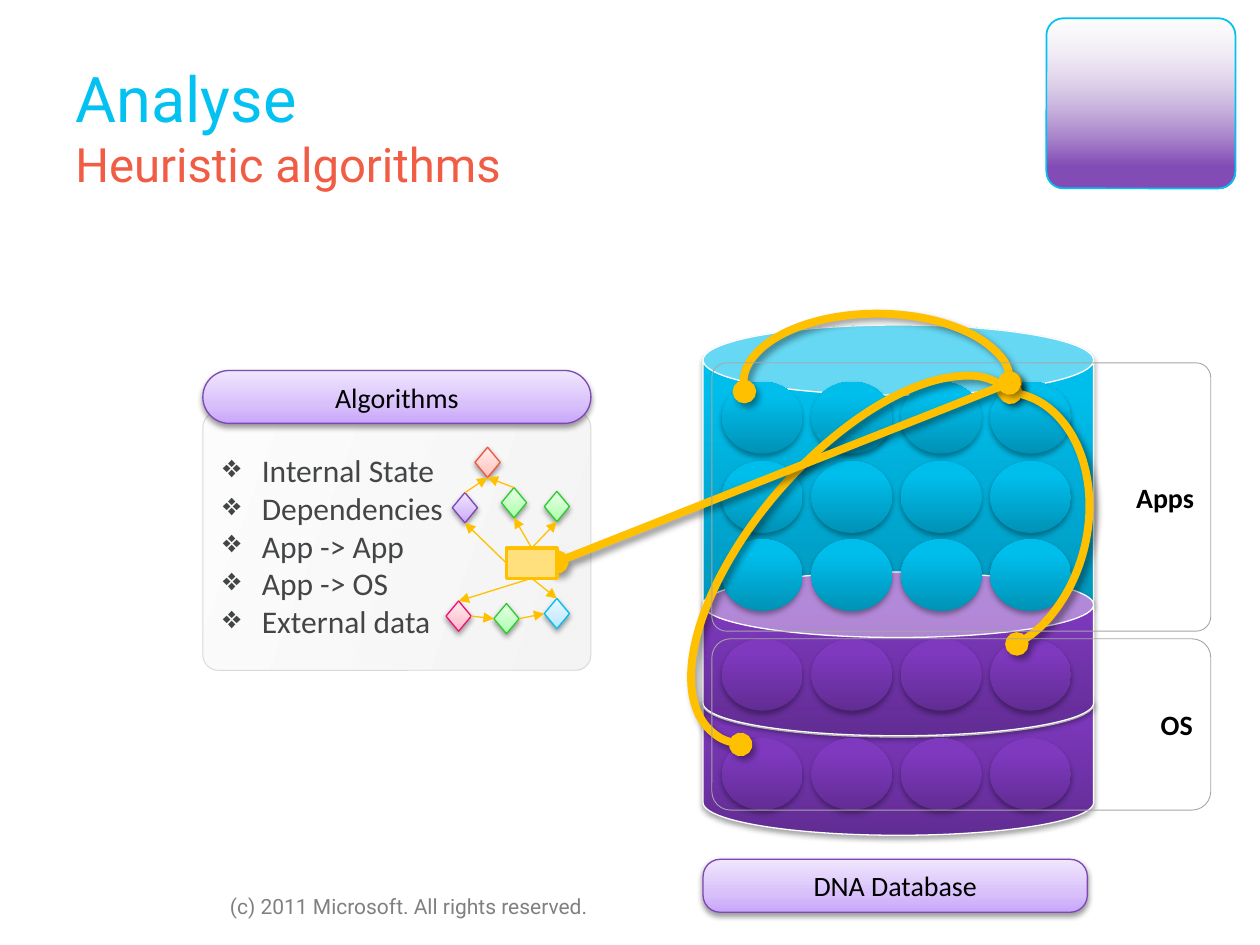
from pptx import Presentation
from pptx.dml.color import RGBColor
from pptx.enum.shapes import MSO_CONNECTOR as LINK, MSO_SHAPE as SHAPE
from pptx.enum.text import MSO_ANCHOR as ANCHOR, PP_ALIGN as ALIGN
from pptx.oxml.ns import qn
from pptx.util import Inches, Pt
from lxml.etree import SubElement

BLACK = RGBColor(0x00, 0x00, 0x00)
WHITE = RGBColor(0xFF, 0xFF, 0xFF)
BODY_GREY = RGBColor(0x43, 0x45, 0x47)
FOOTER_GREY = RGBColor(0x80, 0x80, 0x80)
FRAME_GREY = RGBColor(0xA6, 0xA6, 0xA6)
PANEL_EDGE = RGBColor(0xD9, 0xD9, 0xD9)
PANEL_DARK = RGBColor(0xF0, 0xF0, 0xF0)
PANEL_LIGHT = RGBColor(0xFC, 0xFC, 0xFC)
TITLE_BLUE = RGBColor(0x03, 0xC2, 0xF1)
TITLE_RED = RGBColor(0xF1, 0x5C, 0x44)
TILE_EDGE = RGBColor(0x00, 0xC2, 0xF1)
TILE_PURPLE = RGBColor(0x82, 0x4B, 0xB5)
TILE_PALE = RGBColor(0xE6, 0xE2, 0xEC)
AMBER = RGBColor(0xFF, 0xC0, 0x00)
PALE_AMBER = RGBColor(0xFF, 0xE0, 0x7D)
VIOLET = RGBColor(0x7F, 0x47, 0xB4)
RED = RGBColor(0xF0, 0x57, 0x3E)
BLUE = RGBColor(0x00, 0xBF, 0xEF)
GREEN = RGBColor(0x2E, 0xCB, 0x2E)
PINK = RGBColor(0xED, 0x13, 0x74)


def ramp(positions, *colors):
    """Pair gradient positions with hex colours, all opaque."""
    return [(at, RGBColor.from_string(color), 100) for at, color in zip(positions, colors)]


SOFT, DEEP = (0, 35, 100), (0, 80, 100)
APP_RAMP = ramp(DEEP, "0092B6", "00BEEC", "00BFEE")
OS_RAMP = ramp(DEEP, "612C93", "7F39BF", "7F37C2")
TINTS = {
    VIOLET: ramp(SOFT, "C8A5FB", "D8C0FB", "F0E6FE"),
    RED: ramp(SOFT, "FFBEBA", "FFD1CE", "FFEEEC"),
    BLUE: ramp(SOFT, "B6E5FF", "CCECFF", "ECF8FF"),
    GREEN: ramp(SOFT, "A7FFA7", "C1FFC1", "E7FFE7"),
    PINK: ramp(SOFT, "FFB4C5", "FFCAD6", "FFEBEF"),
}
LABEL_SHADOW = (38, 3.1, 1.6, 90)
STORE_SHADOW = (35, 3.1, 1.8, 90)
LINK_SHADOW = (40, 4, 3, 45)


def add_color(parent, color, alpha):
    """Append an RGB colour with an opacity in percent."""
    rgb = SubElement(parent, qn("a:srgbClr"), val=str(color))
    SubElement(rgb, qn("a:alpha"), val=str(alpha * 1000))


def set_gradient(shape, stops, angle):
    """Fill a shape with gradient stops at a clockwise angle."""
    shape.fill.gradient()
    shape.fill.gradient_angle = (360 - angle) % 360
    stop_list = shape._element.spPr.find(".//" + qn("a:gsLst"))
    for old in list(stop_list):
        stop_list.remove(old)
    for at, color, alpha in stops:
        add_color(SubElement(stop_list, qn("a:gs"), pos=str(at * 1000)), color, alpha)


def set_shadow(shape, shadow):
    """Replace the inherited shadow with the given one, if any."""
    effects = SubElement(shape._element.spPr, qn("a:effectLst"))
    if shadow:
        alpha, blur, distance, angle = shadow
        outer = SubElement(effects, qn("a:outerShdw"), blurRad=str(Pt(blur)), dist=str(Pt(distance)),
                           dir=str(angle * 60000), rotWithShape="0")
        add_color(outer, BLACK, alpha)


def set_line(shape, color, width, **ends):
    """Set an outline and its optional headEnd and tailEnd."""
    shape.line.color.rgb = color
    shape.line.width = Pt(width)
    for end, kind in ends.items():
        SubElement(shape.line._get_or_add_ln(), qn("a:" + end), type=kind)


def add_figure(slide, preset, box, stops=None, edge=None, width=0.75, shadow=None, adj=(), angle=270, **ends):
    """Add a preset shape with its fill, outline and shadow."""
    shape = slide.shapes.add_shape(preset, *map(Inches, box))
    for index, value in enumerate(adj):
        shape.adjustments[index] = value
    if stops:
        set_gradient(shape, stops, angle)
    else:
        shape.fill.background()
    if edge is None:
        shape.line.fill.background()
    else:
        set_line(shape, edge, width, **ends)
    set_shadow(shape, shadow)
    return shape


def add_link(slide, start, end, width, shadow=None, **ends):
    """Add an amber straight connector."""
    link = slide.shapes.add_connector(LINK.STRAIGHT, *map(Inches, (*start, *end)))
    set_line(link, AMBER, width, **ends)
    set_shadow(link, shadow)


def add_run(paragraph, text, size, font, color, bold=False):
    """Add one styled run."""
    run = paragraph.add_run()
    run.text = text
    run.font.size, run.font.name, run.font.bold = Pt(size), font, bold
    run.font.color.rgb = color


def write_label(shape, text, align, size=16, font="Calibri", color=BLACK, bold=False):
    """Write one vertically centred line in a shape."""
    frame = shape.text_frame
    frame.word_wrap = True
    frame.vertical_anchor = ANCHOR.MIDDLE
    frame.paragraphs[0].alignment = align
    add_run(frame.paragraphs[0], text, size, font, color, bold)


def add_plate(slide, box, text, corner):
    """Add a violet name plate."""
    plate = add_figure(slide, SHAPE.ROUNDED_RECTANGLE, box, TINTS[VIOLET], VIOLET,
                       shadow=LABEL_SHADOW, adj=[corner])
    write_label(plate, text, ALIGN.CENTER)


def add_title(slide, box):
    """Add the title and its subtitle line."""
    frame = slide.shapes.add_textbox(*map(Inches, box)).text_frame
    frame.word_wrap = True
    frame.vertical_anchor = ANCHOR.MIDDLE
    heading = frame.paragraphs[0]
    add_run(heading, "Analyse", 36, "Roboto", TITLE_BLUE)
    heading.add_line_break()
    add_run(heading, "Heuristic algorithms", 27, "Roboto", TITLE_RED)


def add_algorithms(slide, box):
    """Add the algorithm panel with its bullets and header."""
    left, top, width, height = box
    panel = [(0, PANEL_DARK, 72), (100, PANEL_LIGHT, 67)]
    add_figure(slide, SHAPE.ROUNDED_RECTANGLE, (left, top + 0.33, width, height - 0.33),
               panel, PANEL_EDGE, 0.5, adj=[0.06], angle=200)
    bullets = slide.shapes.add_textbox(*map(Inches, (left + 0.06, top + 0.59, 2.19, 1.62)))
    frame = bullets.text_frame
    frame.word_wrap = True
    topics = ["Internal State", "Dependencies", "App -> App", "App -> OS", "External data"]
    for index, topic in enumerate(topics):
        paragraph = frame.add_paragraph() if index else frame.paragraphs[0]
        paragraph.alignment = ALIGN.JUSTIFY
        props = paragraph._p.get_or_add_pPr()
        props.set("marL", str(Inches(0.31)))
        props.set("indent", str(Inches(-0.31)))
        SubElement(props, qn("a:buChar"), char="❖")
        add_run(paragraph, topic, 18, "Calibri", BODY_GREY)
    add_plate(slide, (left, top, width, 0.42), "Algorithms", 0.5)


def add_database(slide, box):
    """Add the stacked cylinders, their records and the name plate."""
    left, top, width, _ = box
    for offset, height, stops, rim in [(0, 2.46, APP_RAMP, 0.226), (2.75, 1.3, OS_RAMP, 0.4),
                                       (1.96, 1.3, OS_RAMP, 0.4)]:
        add_figure(slide, SHAPE.CAN, (left, top + offset, width, height), stops, WHITE,
                   shadow=STORE_SHADOW, adj=[rim])
    add_plate(slide, (left, top + 4.24, 3.05, 0.42), "DNA Database", 0.323)
    for offset, stops in [(0.45, APP_RAMP), (1.08, APP_RAMP), (1.7, APP_RAMP), (2.49, OS_RAMP), (3.28, OS_RAMP)]:
        for column in range(4):
            record = (left + 0.15 + 0.71 * column, top + offset, 0.64, 0.57)
            add_figure(slide, SHAPE.OVAL, record, stops, shadow=STORE_SHADOW)


def add_dependencies(slide, box):
    """Add the thick links between the records and the algorithm graph."""
    left, top, width, _ = box
    ovals = dict(headEnd="oval", tailEnd="oval")
    arcs = [((1.48, 0, 2.12, 1.1), 0, False, (105.77, 0)),
            ((0.61, 1.11, 3.59, 1.7), 310.9, False, (103.24, 0)),
            ((2.38, 0.89, 2.11, 1.55), 282.8, True, (123.28, 2.3))]
    for (x, y, w, h), turn, flipped, sweep in arcs:
        arc = add_figure(slide, SHAPE.ARC, (left + x, top + y, w, h), edge=AMBER, width=4.5,
                         shadow=LINK_SHADOW, adj=sweep, **ovals)
        arc.rotation = turn
        if flipped:
            arc._element.spPr.xfrm.set("flipV", "1")
    add_link(slide, (left + 3.59, top + 0.55), (left, top + 1.97), 4.5, LINK_SHADOW, **ovals)


def add_graph(slide, box):
    """Add the small graph of diamonds around its hub."""
    left, top, _, _ = box
    nodes = {"state": (0.23, 0, RED), "rule": (0.05, 0.36, VIOLET), "data": (0.78, 1.2, BLUE),
             "step": (0.38, 1.24, GREEN), "source": (0, 1.22, PINK),
             "app": (0.78, 0.35, GREEN), "service": (0.44, 0.32, GREEN)}
    boxes = {name: (left + x, top + y, 0.2, 0.24) for name, (x, y, _) in nodes.items()}
    boxes["hub"] = (left + 0.48, top + 0.8, 0.4, 0.24)
    hub = add_figure(slide, SHAPE.RECTANGLE, boxes["hub"], edge=AMBER, width=2)
    hub.fill.solid()
    hub.fill.fore_color.rgb = PALE_AMBER
    for name, (_, _, color) in nodes.items():
        add_figure(slide, SHAPE.DIAMOND, boxes[name], TINTS[color], color, shadow=LABEL_SHADOW)
    sides = {"left": (0, 0.5), "right": (1, 0.5), "top": (0.5, 0), "bottom": (0.5, 1)}

    def anchor(name, side):
        """Return the middle of one side of a node."""
        x, y, w, h = boxes[name]
        across, down = sides[side]
        return x + w * across, y + h * down

    for start, leave, end, enter in [
            ("hub", "left", "rule", "bottom"), ("rule", "top", "state", "bottom"),
            ("source", "right", "step", "left"), ("hub", "bottom", "data", "top"),
            ("hub", "bottom", "source", "top"), ("hub", "top", "service", "bottom"),
            ("hub", "top", "app", "bottom"), ("service", "top", "state", "bottom"),
            ("step", "right", "data", "left")]:
        add_link(slide, anchor(start, leave), anchor(end, enter), 0.75, tailEnd="triangle")


def add_layer(slide, box, name, corner):
    """Add a thin frame naming one layer of the database."""
    layer = add_figure(slide, SHAPE.ROUNDED_RECTANGLE, box, edge=FRAME_GREY, width=0.5, adj=[corner])
    write_label(layer, name, ALIGN.RIGHT, bold=True)


def add_tile(slide, box):
    """Add the upright gradient tile in the corner."""
    stops = [(13, TILE_PURPLE, 100), (100, TILE_PALE, 7)]
    tile = add_figure(slide, SHAPE.ROUNDED_RECTANGLE, box, stops, TILE_EDGE, 1, adj=[0.1], angle=0)
    tile.rotation = 270


def add_footer(slide, box):
    """Add the copyright line."""
    footer = slide.shapes.add_textbox(*map(Inches, box))
    write_label(footer, "(c) 2011 Microsoft. All rights reserved.", ALIGN.CENTER, 12, "Roboto", FOOTER_GREY)


def main():
    """Build and save the slide."""
    deck = Presentation()
    deck.slide_width, deck.slide_height = Inches(10), Inches(7.5)
    slide = deck.slides.add_slide(deck.slide_layouts[6])
    add_algorithms(slide, (1.61, 2.94, 3.08, 2.38))
    add_database(slide, (5.58, 2.58, 3.1, 4.66))
    add_dependencies(slide, (4.42, 2.49, 4.49, 2.81))
    add_graph(slide, (3.54, 3.55, 0.98, 1.48))
    add_layer(slide, (5.65, 2.88, 3.96, 2.13), "Apps", 0.055)
    add_layer(slide, (5.65, 5.07, 3.96, 1.36), "OS", 0.11)
    add_title(slide, (0.5, 0.37, 9, 1.25))
    add_tile(slide, (8.38, 0.07, 1.35, 1.5))
    add_footer(slide, (1.66, 6.99, 3.17, 0.4))
    deck.save("out.pptx")


if __name__ == "__main__":
    main()
